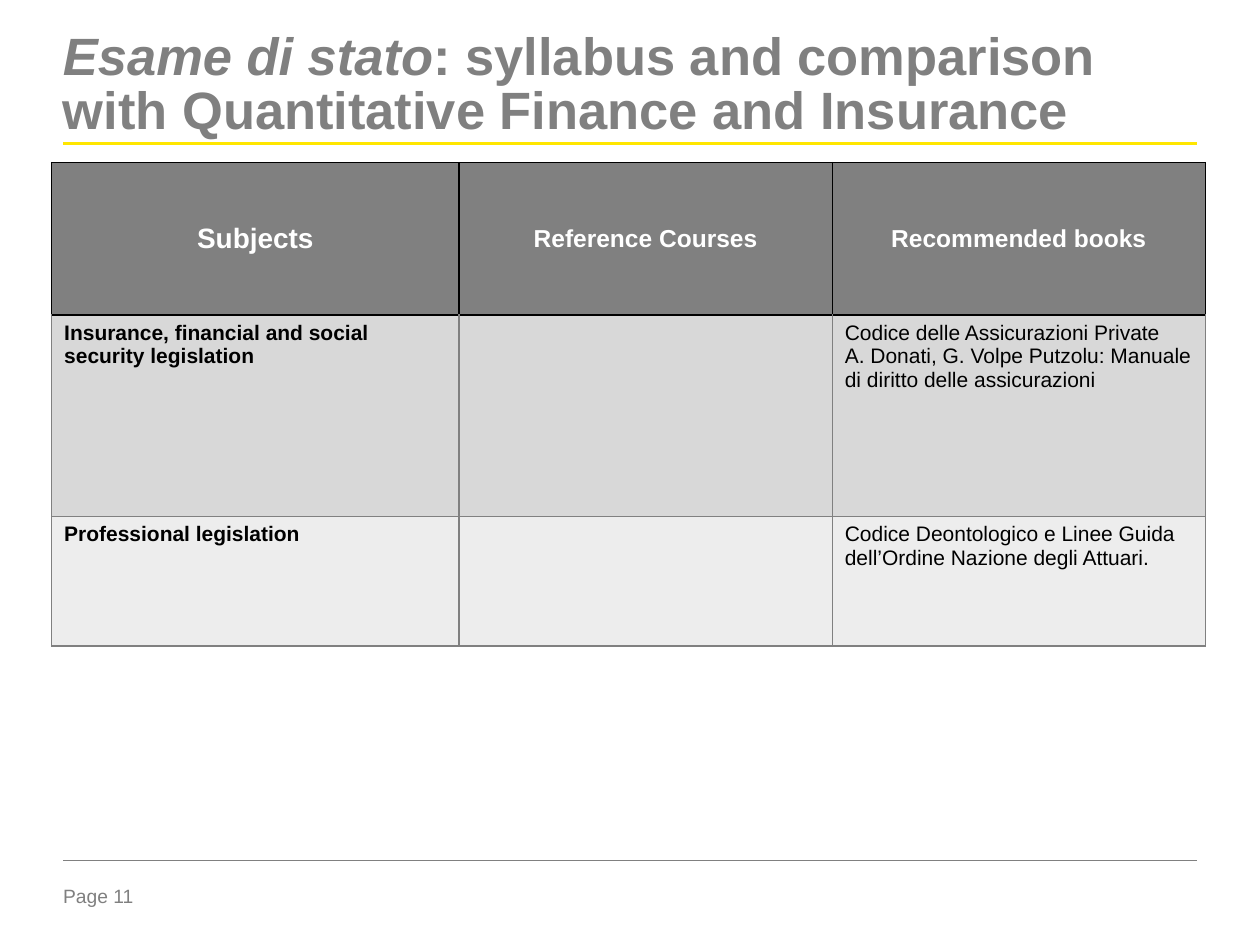
import dataclasses

import lxml.etree
import pptx
import pptx.dml.color
import pptx.enum.shapes
import pptx.enum.text
import pptx.oxml.ns
import pptx.util

Pt = pptx.util.Pt
ALIGN = pptx.enum.text.PP_ALIGN
ANCHOR = pptx.enum.text.MSO_ANCHOR
qn = pptx.oxml.ns.qn


@dataclasses.dataclass(frozen=True)
class Theme:
    font: str = "Arial"
    gray: str = "808080"
    yellow: str = "FFE600"
    black: str = "000000"
    white: str = "FFFFFF"
    bands: tuple = ("D8D8D8", "EDEDED")
    title_size: int = 30
    first_header_size: int = 16
    header_size: int = 14
    body_size: int = 12
    footer_size: int = 11


THEME = Theme()
LEFT, RIGHT = 36, 684
COLUMN_WIDTHS = (232.8, 213.3, 213.3)
ROW_HEIGHTS = (87.1, 115.2, 74.1)
HEADERS = ("Subjects", "Reference Courses", "Recommended books")
ROWS = (
    ("Insurance, financial and social security legislation", "",
     "Codice delle Assicurazioni Private\n"
     "A. Donati, G. Volpe Putzolu: Manuale di diritto delle assicurazioni"),
    ("Professional legislation", "",
     "Codice Deontologico e Linee Guida dell’Ordine Nazione degli Attuari."),
)


def rgb(color):
    return pptx.dml.color.RGBColor.from_string(color)


def style(para, size, color, bold=False):
    para.font.name = THEME.font
    para.font.size = Pt(size)
    para.font.bold = bold
    para.font.color.rgb = rgb(color)


def add_box(page, left, top, width, height, inset_top=0):
    """Add an empty text box and return its first paragraph."""
    frame = page.shapes.add_textbox(Pt(left), Pt(top), Pt(width), Pt(height)).text_frame
    frame.word_wrap = True
    frame.margin_left = frame.margin_right = frame.margin_bottom = 0
    frame.margin_top = Pt(inset_top)
    return frame.paragraphs[0]


def add_title(page):
    para = add_box(page, LEFT, 15.8, RIGHT - LEFT, 67.7, inset_top=2.9)
    para.line_spacing = 0.85
    style(para, THEME.title_size, THEME.gray, bold=True)
    span = para.add_run()
    span.text = "Esame di stato"
    span.font.italic = True
    para.add_run().text = ": syllabus and comparison with Quantitative Finance and Insurance"


def add_footer(page):
    para = add_box(page, LEFT, 505.4, 56.9, 15.8)
    para.text = "Page 11"
    style(para, THEME.footer_size, THEME.gray)


def add_rule(page, top, color, weight):
    """Draw a line across the page between the side margins."""
    rule = page.shapes.add_connector(
        pptx.enum.shapes.MSO_CONNECTOR.STRAIGHT, Pt(LEFT), Pt(top), Pt(RIGHT), Pt(top))
    rule.line.color.rgb = rgb(color)
    rule.line.width = Pt(weight)
    lxml.etree.SubElement(rule._element.spPr, qn("a:effectLst"))


def set_borders(cell, color, top_color):
    properties = cell._tc.get_or_add_tcPr()
    for side in "LRTB":
        line = lxml.etree.SubElement(properties, qn(f"a:ln{side}"), w=str(Pt(1)))
        fill = lxml.etree.SubElement(line, qn("a:solidFill"))
        lxml.etree.SubElement(fill, qn("a:srgbClr"), val=top_color if side == "T" else color)


def fill_cell(cell, text, fill, border, top_border, size, color, bold,
              align=ALIGN.LEFT, anchor=ANCHOR.TOP):
    set_borders(cell, border, top_border)
    cell.fill.solid()
    cell.fill.fore_color.rgb = rgb(fill)
    cell.vertical_anchor = anchor
    cell.text = text
    for para in cell.text_frame.paragraphs:
        para.alignment = align
        style(para, size, color, bold)


def add_syllabus_table(page):
    table = page.shapes.add_table(
        len(ROW_HEIGHTS), len(COLUMN_WIDTHS), Pt(29.5), Pt(92.9),
        Pt(sum(COLUMN_WIDTHS)), Pt(sum(ROW_HEIGHTS))).table
    for column, width in zip(table.columns, COLUMN_WIDTHS):
        column.width = Pt(width)
    for row, height in zip(table.rows, ROW_HEIGHTS):
        row.height = Pt(height)

    for index, text in enumerate(HEADERS):
        size = THEME.header_size if index else THEME.first_header_size
        fill_cell(table.cell(0, index), text, THEME.gray, THEME.black, THEME.black,
                  size, THEME.white, True, ALIGN.CENTER, ANCHOR.MIDDLE)
    for number, (texts, band) in enumerate(zip(ROWS, THEME.bands), start=1):
        top_border = THEME.black if number == 1 else THEME.gray
        for index, text in enumerate(texts):
            fill_cell(table.cell(number, index), text, band, THEME.gray, top_border,
                      THEME.body_size, THEME.black, bold=index == 0)


def main():
    deck = pptx.Presentation()
    deck.slide_width, deck.slide_height = Pt(720), Pt(540)
    page = deck.slides.add_slide(deck.slide_layouts[6])
    add_footer(page)
    add_rule(page, 82.1, THEME.yellow, 1.5)
    add_rule(page, 491.8, THEME.gray, 0.25)
    add_title(page)
    add_syllabus_table(page)
    deck.save("out.pptx")


if __name__ == "__main__":
    main()
